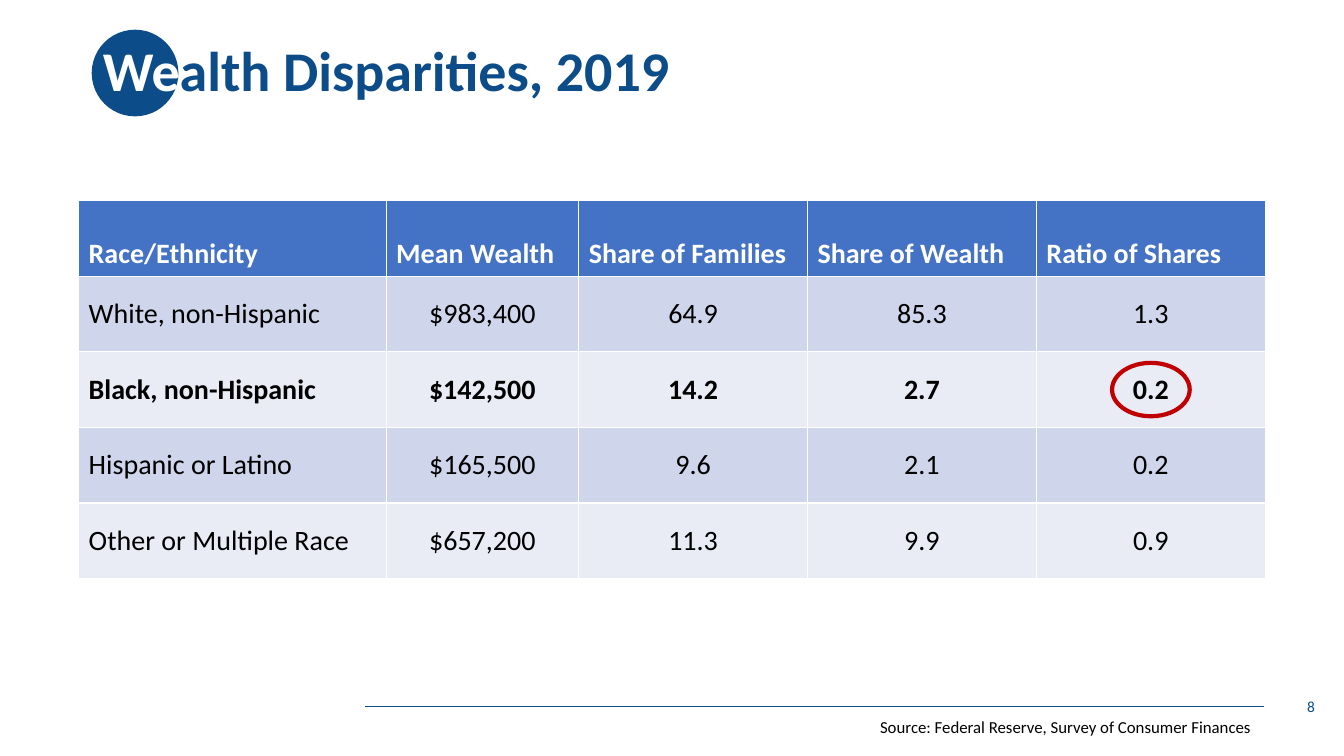
from lxml import etree
from pptx import Presentation
from pptx import util as u
from pptx.dml.color import RGBColor
from pptx.enum import shapes, text
from pptx.oxml import ns

NAVY = RGBColor(0x0C, 0x4C, 0x88)
WHITE = RGBColor(0xFF, 0xFF, 0xFF)
BLACK = RGBColor(0, 0, 0)
RED = RGBColor(0xC0, 0, 0)
HEADER_BLUE = RGBColor(0x44, 0x72, 0xC4)
BANDS = [RGBColor(0xCF, 0xD5, 0xEA), RGBColor(0xE9, 0xEB, 0xF5)]

COLUMN_WIDTHS = [3.05, 1.91, 2.27, 2.27, 2.27]
ROW_HEIGHT = 0.75
HIGHLIGHT_ROW, HIGHLIGHT_COLUMN = 2, 4
WEALTH_ROWS = [
    ["Race/Ethnicity", "Mean Wealth", "Share of Families", "Share of Wealth", "Ratio of Shares"],
    ["White, non-Hispanic", "$983,400", "64.9", "85.3", "1.3"],
    ["Black, non-Hispanic", "$142,500", "14.2", "2.7", "0.2"],
    ["Hispanic or Latino", "$165,500", "9.6", "2.1", "0.2"],
    ["Other or Multiple Race", "$657,200", "11.3", "9.9", "0.9"],
]


def set_attributes(target, values):
    for name, value in values.items():
        setattr(target, name, value)


def add_run(paragraph, words, size, color, bold=False):
    run = paragraph.add_run()
    run.text = words
    set_attributes(run.font, {"name": "Calibri", "size": u.Pt(size), "bold": bold})
    run.font.color.rgb = color


def add_ellipse(slide, left, top, width, height):
    ellipse = slide.shapes.add_shape(
        shapes.MSO_SHAPE.OVAL, *map(u.Inches, (left, top, width, height)))
    ellipse.shadow.inherit = False
    return ellipse


def add_label(slide, words, box, size, color, frame_format, alignment):
    label = slide.shapes.add_textbox(*map(u.Inches, box))
    set_attributes(label.text_frame, frame_format)
    paragraph = label.text_frame.paragraphs[0]
    paragraph.alignment = alignment
    add_run(paragraph, words, size, color)


def add_heading(slide, left, top, width, height):
    title = slide.shapes.title
    lengths = {"left": left, "top": top, "width": width, "height": height}
    set_attributes(title, {name: u.Inches(value) for name, value in lengths.items()})
    set_attributes(title.text_frame, {
        "vertical_anchor": text.MSO_ANCHOR.MIDDLE,
        "auto_size": text.MSO_AUTO_SIZE.NONE,
        "word_wrap": True,
    })
    paragraph = title.text_frame.paragraphs[0]
    set_attributes(paragraph, {"alignment": text.PP_ALIGN.LEFT, "line_spacing": 0.9})
    add_run(paragraph, "We", 40, WHITE, True)
    add_run(paragraph, "alth Disparities, 2019", 40, NAVY, True)

    diameter = 0.86
    circle = add_ellipse(slide, left - 0.01, top + (height - diameter) / 2, diameter, diameter)
    circle.fill.solid()
    circle.fill.fore_color.rgb = NAVY
    circle.line.fill.background()
    title.element.addprevious(circle.element)


def add_wealth_table(slide, left, top):
    frame = slide.shapes.add_table(
        len(WEALTH_ROWS), len(COLUMN_WIDTHS), u.Inches(left), u.Inches(top),
        u.Inches(sum(COLUMN_WIDTHS)), u.Inches(ROW_HEIGHT * len(WEALTH_ROWS)))
    table = frame.table
    for column, width in zip(table.columns, COLUMN_WIDTHS):
        column.width = u.Inches(width)
    for row_index, values in enumerate(WEALTH_ROWS):
        table.rows[row_index].height = u.Inches(ROW_HEIGHT)
        is_header = row_index == 0
        fill = HEADER_BLUE if is_header else BANDS[(row_index - 1) % 2]
        anchor = text.MSO_ANCHOR.BOTTOM if is_header else text.MSO_ANCHOR.MIDDLE
        for column_index, value in enumerate(values):
            cell = table.cell(row_index, column_index)
            cell.vertical_anchor = anchor
            cell.fill.solid()
            cell.fill.fore_color.rgb = fill
            paragraph = cell.text_frame.paragraphs[0]
            centered = column_index > 0 and not is_header
            paragraph.alignment = text.PP_ALIGN.CENTER if centered else text.PP_ALIGN.LEFT
            add_run(paragraph, value, 20, WHITE if is_header else BLACK,
                    row_index in (0, HIGHLIGHT_ROW))

    ring_width, ring_height = 0.77, 0.53
    center_x = left + sum(COLUMN_WIDTHS[:HIGHLIGHT_COLUMN]) + COLUMN_WIDTHS[HIGHLIGHT_COLUMN] / 2
    center_y = top + (HIGHLIGHT_ROW + 0.5) * ROW_HEIGHT
    ring = add_ellipse(slide, center_x - ring_width / 2, center_y - ring_height / 2,
                       ring_width, ring_height)
    ring.fill.background()
    ring.line.color.rgb = RED
    ring.line.width = u.Pt(3)


def add_footer(slide, left, top, width):
    right = left + width
    rule = slide.shapes.add_connector(
        shapes.MSO_CONNECTOR.STRAIGHT, u.Inches(left), u.Inches(top),
        u.Inches(right), u.Inches(top))
    rule.line.color.rgb = NAVY
    rule.line.width = u.Pt(0.5)
    etree.SubElement(rule.element.spPr, ns.qn("a:effectLst"))
    add_label(slide, "8", (right - 2.4, top - 0.2, 3, 0.4), 11, NAVY,
              {"vertical_anchor": text.MSO_ANCHOR.MIDDLE, "word_wrap": True},
              text.PP_ALIGN.RIGHT)
    add_label(slide, "Source: Federal Reserve, Survey of Consumer Finances",
              (right - 3.91, top + 0.05, 3.92, 0.3), 12, BLACK,
              {"word_wrap": False, "auto_size": text.MSO_AUTO_SIZE.SHAPE_TO_FIT_TEXT},
              text.PP_ALIGN.LEFT)


def main():
    presentation = Presentation()
    presentation.slide_width = u.Inches(13.33)
    presentation.slide_height = u.Inches(7.5)
    slide = presentation.slides.add_slide(presentation.slide_layouts[5])
    add_heading(slide, 0.92, 0, 11.5, 1.45)
    add_wealth_table(slide, 0.78, 1.99)
    add_footer(slide, 3.62, 7.01, 8.92)
    presentation.save("out.pptx")


if __name__ == "__main__":
    main()
